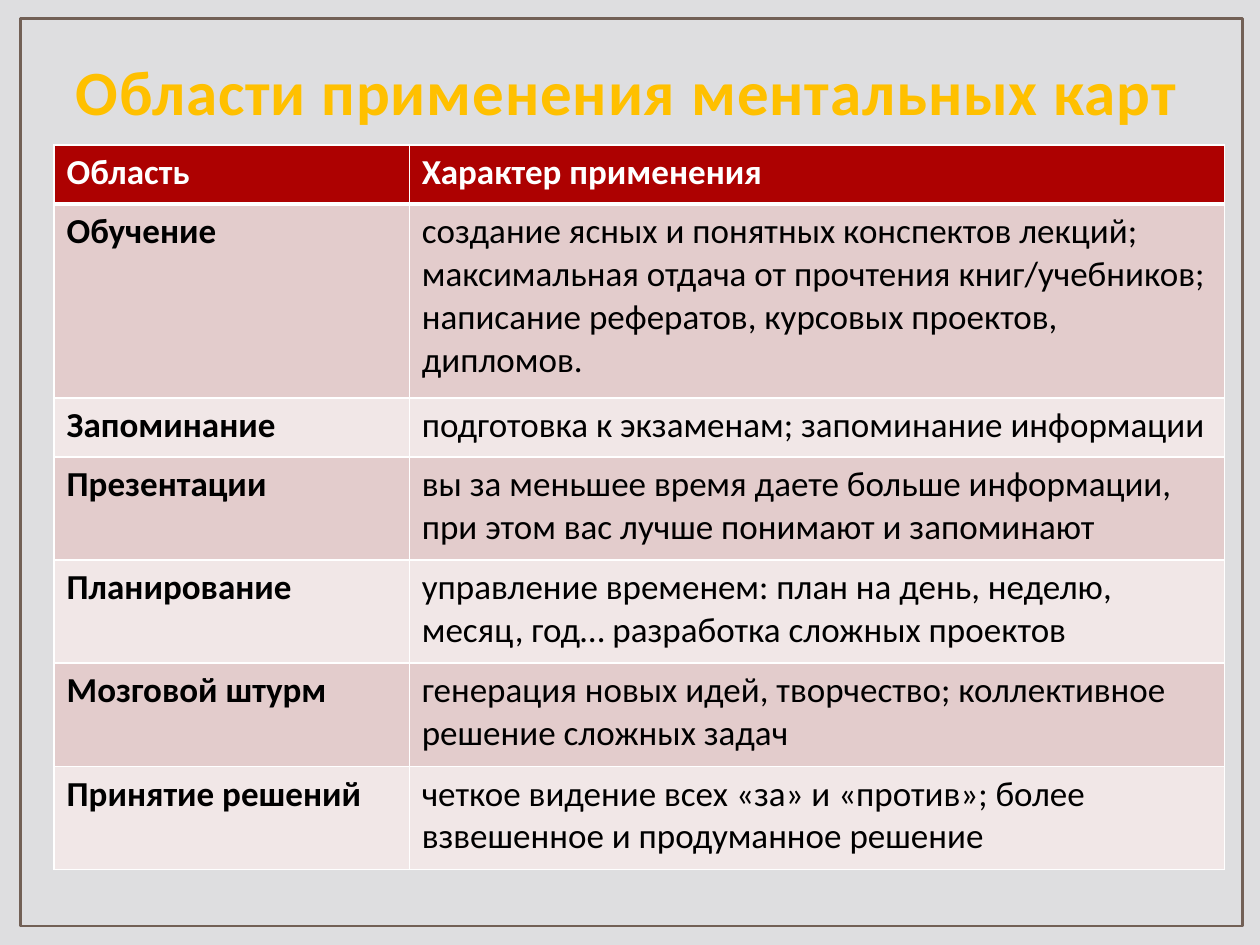
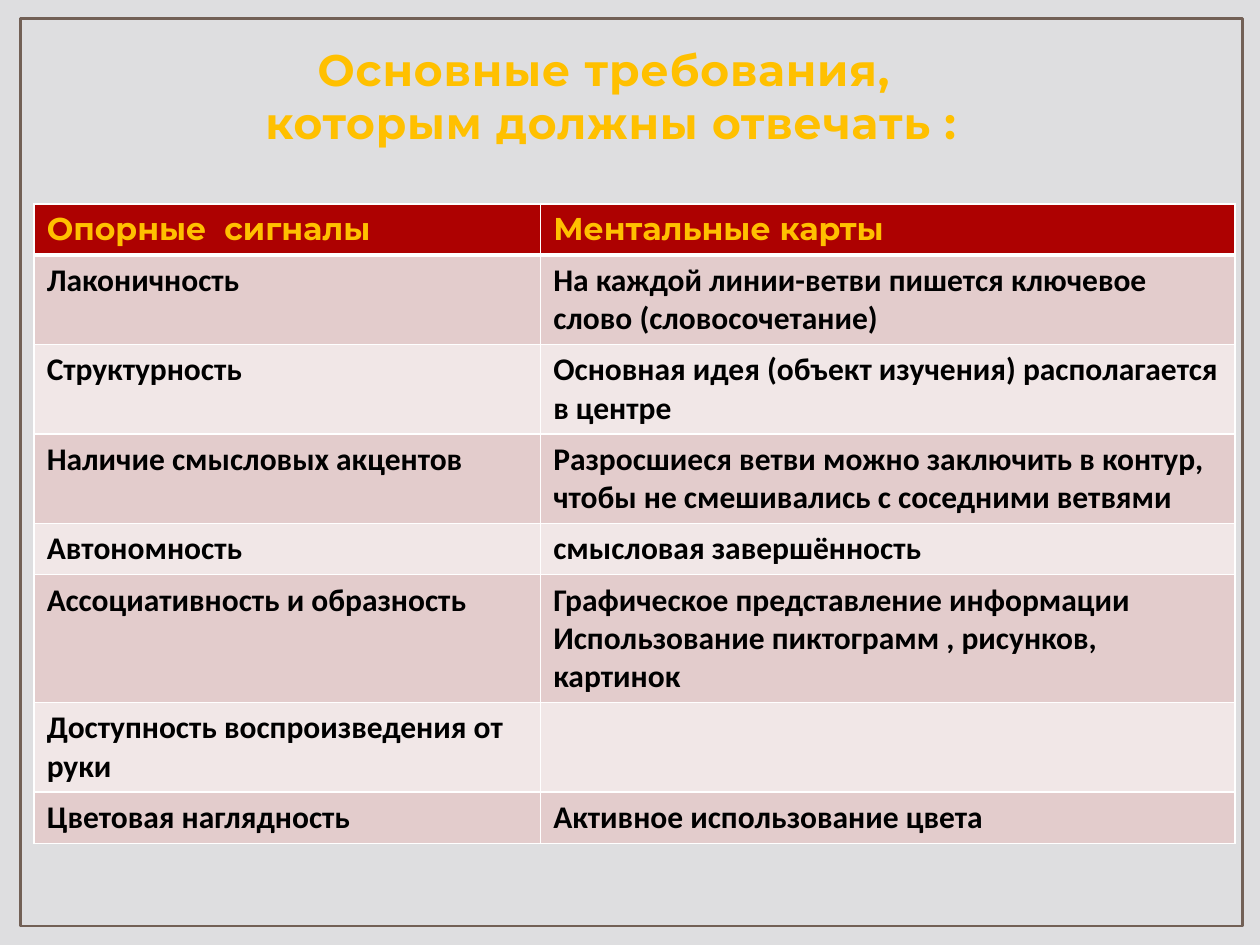
import pptx
import pptx.util
import pptx.dml.color
import pptx.enum.shapes
import pptx.enum.text
import pptx.oxml
import pptx.oxml.ns
from pptx.util import Cm

HUES = {
    "page": "DEDEE0", "frame": "726056", "gold": "FFC000", "head": "AD0101",
    "dark": "E3CCCC", "pale": "F1E7E7", "white": "FFFFFF", "black": "000000",
}
ALIGN = pptx.enum.text.PP_ALIGN

AREAS = [
    ("Область", "Характер применения"),
    ("Обучение", "создание ясных и понятных конспектов лекций; максимальная отдача "
     "от прочтения книг/учебников; написание рефератов, курсовых проектов, дипломов."),
    ("Запоминание", "подготовка к экзаменам; запоминание информации"),
    ("Презентации", "вы за меньшее время даете больше информации, "
     "при этом вас лучше понимают и запоминают"),
    ("Планирование", "управление временем: план на день, неделю, месяц, год… "
     "разработка сложных проектов"),
    ("Мозговой штурм", "генерация новых идей, творчество; "
     "коллективное решение сложных задач"),
    ("Принятие решений", "четкое видение всех «за» и «против»; "
     "более взвешенное и продуманное решение"),
]
NEEDS = [
    ("Опорные  сигналы", "Ментальные карты"),
    ("Лаконичность", "На каждой линии-ветви пишется ключевое слово (словосочетание)"),
    ("Структурность", "Основная идея (объект изучения) располагается в центре"),
    ("Наличие смысловых акцентов", "Разросшиеся ветви можно заключить в контур, "
     "чтобы не смешивались с соседними ветвями"),
    ("Автономность", "смысловая завершённость"),
    ("Ассоциативность и образность", "Графическое представление информации\n"
     "Использование пиктограмм , рисунков, картинок"),
    ("Доступность воспроизведения от руки", ""),
    ("Цветовая наглядность", "Активное использование цвета"),
]


def paint(name):
    return pptx.dml.color.RGBColor.from_string(HUES[name])


def write(frame, text, size=18, font="Calibri", hue="black", bold=True,
          align=ALIGN.LEFT, track=0):
    """Fill a text frame: a newline starts a paragraph, \\v breaks a line."""
    frame.text = text
    for par in frame.paragraphs:
        par.alignment = align
        par.font.size = pptx.util.Pt(size)
        for run in par.runs:
            run.font.size = pptx.util.Pt(size)
            run.font.name = font
            run.font.bold = bold
            run.font.color.rgb = paint(hue)
            if track:
                run.font._element.set("spc", str(track))


# Slide with its frame and title
def add_page(deck, text, box, **style):
    page = deck.slides.add_slide(deck.slide_layouts[5])
    rim = page.shapes.add_shape(pptx.enum.shapes.MSO_SHAPE.RECTANGLE,
                                Cm(0.41), Cm(0.38), Cm(24.64), Cm(18.29))
    rim.shadow.inherit = False
    rim.fill.background()
    rim.line.color.rgb = paint("frame")
    rim.line.width = pptx.util.Pt(1.5)

    title = page.shapes.title
    title.left, title.top, title.width, title.height = map(Cm, box)
    frame = title.text_frame
    frame.word_wrap = True
    frame.auto_size = pptx.enum.text.MSO_AUTO_SIZE.NONE
    frame.vertical_anchor = pptx.enum.text.MSO_ANCHOR.BOTTOM
    write(frame, text, hue="gold", track=50, **style)
    return page


# Cell borders: white, heavier under the header
def edge(cell, under):
    props = cell._tc.get_or_add_tcPr()
    for side, width in (("L", 1), ("R", 1), ("T", 1), ("B", under)):
        props.append(pptx.oxml.parse_xml(
            f'<a:ln{side} {pptx.oxml.ns.nsdecls("a")} w="{pptx.util.Pt(width)}">'
            f'<a:solidFill><a:srgbClr val="{HUES["white"]}"/></a:solidFill>'
            f'</a:ln{side}>'))


# Banded table; head, key and body are text formats
def add_grid(page, data, left, top, wides, highs, head, key, body):
    grid = page.shapes.add_table(len(data), len(wides), Cm(left), Cm(top),
                                 Cm(sum(wides)), Cm(sum(highs))).table
    for col, wide in zip(grid.columns, wides):
        col.width = Cm(wide)
    for r, (row, high) in enumerate(zip(data, highs)):
        grid.rows[r].height = Cm(high)
        band = "head" if r == 0 else ("pale", "dark")[r % 2]
        for c, text in enumerate(row):
            cell = grid.cell(r, c)
            edge(cell, 1 if r else 3)
            cell.fill.solid()
            cell.fill.fore_color.rgb = paint(band)
            write(cell.text_frame, text, **(head if r == 0 else (key, body)[c]))


def main():
    deck = pptx.Presentation()
    deck.slide_width, deck.slide_height = Cm(25.4), Cm(19.05)
    back = deck.slide_master.background.fill
    back.solid()
    back.fore_color.rgb = paint("page")

    # Areas of use
    page = add_page(deck, "Области применения ментальных карт",
                    (1.27, 0.76, 22.86, 1.96), size=36)
    add_grid(page, AREAS, 1.09, 2.92, (7.16, 16.43),
             (1.19, 3.91, 1.19) + (2.08,) * 4,
             head={"size": 20, "hue": "white"}, key={"size": 20},
             body={"size": 20, "bold": False})

    # Requirements
    page = add_page(deck, "Основные требования, \vкоторым должны отвечать :",
                    (0.89, 0.53, 22.86, 2.59), size=25.2, font="Montserrat",
                    align=ALIGN.CENTER)
    add_grid(page, NEEDS, 0.69, 4.11, (10.21, 14),
             (1.03, 1.78, 1.78, 1.78, 1.03, 2.54, 1.78, 1.03),
             head={"font": "Montserrat", "hue": "gold"}, key={}, body={})

    deck.save("out.pptx")


if __name__ == "__main__":
    main()
